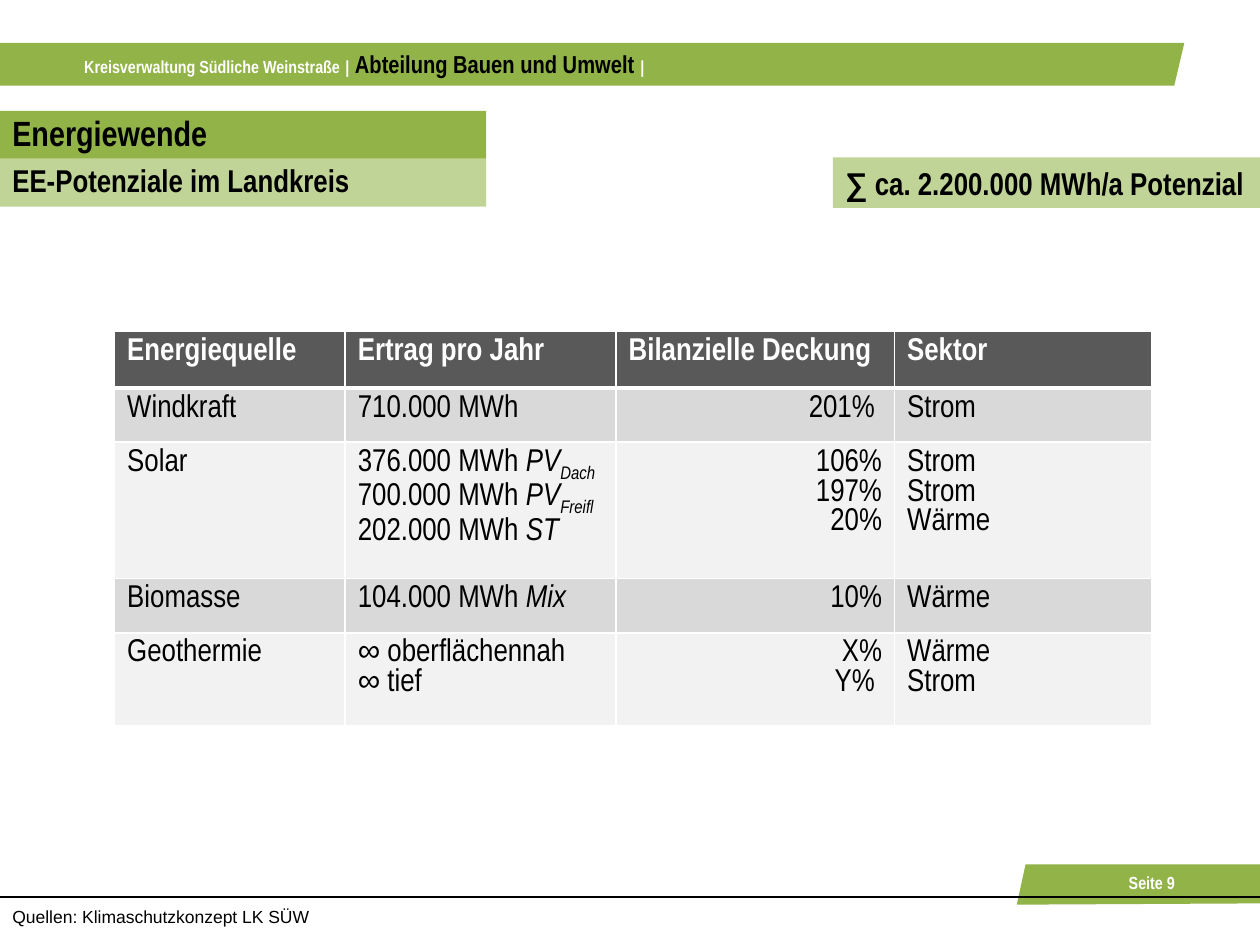
from lxml import etree
from pptx import Presentation
from pptx import util as u
from pptx.dml.color import RGBColor
from pptx.enum import shapes, text
from pptx.oxml import ns

Inches = u.Inches
COLORS = {
    "green": "91B347", "light green": "C1D498", "black": "000000", "white": "FFFFFF",
    "header": "595959", "odd row": "D9D9D9", "even row": "F2F2F2",
}
COLUMN_WIDTHS = [1.83, 2.15, 2.21, 2.04]
ROW_HEIGHTS = [0.45, 0.43, 1.06, 0.43, 0.74]
ROWS = [
    ["Energiequelle", "Ertrag pro Jahr", "Bilanzielle Deckung", "Sektor"],
    ["Windkraft", "710.000 MWh", "201% ", "Strom"],
    ["Solar", "376.000 MWh \n700.000 MWh \n202.000 MWh ", "106%\n197%\n20%",
     "Strom\nStrom\nWärme"],
    ["Biomasse", "104.000 MWh ", "10%", "Wärme"],
    ["Geothermie", "∞ oberflächennah\n∞ tief", "X%\nY% ", "Wärme\nStrom"],
]
TECHNOLOGIES = {2: [("PV", "Dach"), ("PV", "Freifl"), ("ST", "")], 3: [("Mix", "")]}


def color(name):
    return RGBColor.from_string(COLORS[name])


def format_run(run, size, color_name, bold=True, font="Arial Narrow"):
    run.font.name = font
    run.font.size = u.Pt(size)
    run.font.bold = bold
    run.font.color.rgb = color(color_name)


def fill_shape(shape, color_name):
    shape.shadow.inherit = False
    shape.fill.solid()
    shape.fill.fore_color.rgb = color(color_name)
    shape.line.fill.background()


def add_outline(slide, points, color_name):
    points = [(Inches(x), Inches(y)) for x, y in points]
    builder = slide.shapes.build_freeform(*points[0])
    builder.add_line_segments(points[1:], close=True)
    fill_shape(builder.convert_to_shape(), color_name)


def add_label(slide, box, segments, font="Arial Narrow", bold=True):
    label = slide.shapes.add_textbox(*map(Inches, box))
    label.text_frame.word_wrap = True
    paragraph = label.text_frame.paragraphs[0]
    for content, size, color_name in segments:
        run = paragraph.add_run()
        run.text = content
        format_run(run, size, color_name, bold, font)


def add_banner(slide, box, content, size, color_name, wrap=True):
    banner = slide.shapes.add_shape(shapes.MSO_SHAPE.RECTANGLE, *map(Inches, box))
    fill_shape(banner, color_name)
    frame = banner.text_frame
    frame.word_wrap = wrap
    frame.vertical_anchor = text.MSO_ANCHOR.MIDDLE
    frame.text = content
    paragraph = frame.paragraphs[0]
    paragraph.alignment = text.PP_ALIGN.LEFT
    format_run(paragraph.runs[0], size, "black")
    return banner


def add_header(slide, left, top, width, height):
    slant = 0.08
    add_outline(slide, [(left, top), (left + width, top),
                        (left + width - slant, top + height), (left, top + height)], "green")
    add_label(slide, (left + 0.57, top, 6.09, height), [
        ("Kreisverwaltung Südliche Weinstraße", 10, "white"), (" ", 14, "white"),
        ("|", 10, "white"), (" ", 14, "white"),
        ("Abteilung Bauen und Umwelt ", 14, "black"), ("|", 10, "white")])


def add_titles(slide, left, top, width, height):
    half = height / 2
    subtitle = add_banner(slide, (left, top + half, width, half),
                          "EE-Potenziale im Landkreis", 18, "green")
    fill_color = subtitle.fill._xPr.find(ns.qn("a:solidFill"))[0]
    etree.SubElement(fill_color, ns.qn("a:alpha"), val="56000")
    title = add_banner(slide, (left, top, width, half), "Energiewende", 20, "green")
    for banner in (subtitle, title):
        paragraph = banner.text_frame.paragraphs[0]
        paragraph.line_spacing = 0.9
        paragraph.space_before = u.Pt(10)


def set_borders(cell, bottom_width):
    properties = cell._tc.get_or_add_tcPr()
    widths = {"lnL": 1, "lnR": 1, "lnT": 1, "lnB": bottom_width}
    for index, (tag, width) in enumerate(widths.items()):
        border = etree.Element(ns.qn(f"a:{tag}"), w=str(u.Pt(width)))
        fill = etree.SubElement(border, ns.qn("a:solidFill"))
        etree.SubElement(fill, ns.qn("a:srgbClr"), val=COLORS["white"])
        properties.insert(index, border)


def add_technology(paragraph, name, subscript):
    for content in filter(None, (name, subscript)):
        run = paragraph.add_run()
        run.text = content
        run.font.italic = True
        if content == subscript:
            run.font._element.set("baseline", "-25000")


def fill_cell(cell, content, row, column):
    is_header = row == 0
    cell.fill.solid()
    cell.fill.fore_color.rgb = color(
        "header" if is_header else "odd row" if row % 2 else "even row")
    set_borders(cell, 3 if is_header else 1)
    cell.text_frame.text = content
    paragraphs = cell.text_frame.paragraphs
    if column == 1:
        for paragraph, technology in zip(paragraphs, TECHNOLOGIES.get(row, [])):
            add_technology(paragraph, *technology)
    for paragraph in paragraphs:
        if column == 2 and not is_header:
            paragraph.alignment = text.PP_ALIGN.RIGHT
        for run in paragraph.runs:
            format_run(run, 18, "white" if is_header else "black", is_header)


def add_energy_table(slide, left, top):
    frame = slide.shapes.add_table(
        len(ROWS), len(COLUMN_WIDTHS), Inches(left), Inches(top),
        Inches(sum(COLUMN_WIDTHS)), Inches(sum(ROW_HEIGHTS)))
    table = frame.table
    for column, width in zip(table.columns, COLUMN_WIDTHS):
        column.width = Inches(width)
    for row, height in zip(table.rows, ROW_HEIGHTS):
        row.height = Inches(height)
    for row, contents in enumerate(ROWS):
        for column, content in enumerate(contents):
            fill_cell(table.cell(row, column), content, row, column)


def add_footer(slide, left, top, width):
    right = left + width
    tab_left = right - 1.93
    add_outline(slide, [(tab_left + 0.07, top), (right, top),
                        (right, top + 0.31), (tab_left, top + 0.32)], "green")
    rule_top = Inches(top + 0.26)
    rule = slide.shapes.add_connector(
        shapes.MSO_CONNECTOR.STRAIGHT, Inches(left), rule_top, Inches(right), rule_top)
    rule.line.color.rgb = color("black")
    rule.line.width = u.Pt(1.25)
    etree.SubElement(rule._element.spPr, ns.qn("a:effectLst"))
    add_label(slide, (right - 1.14, top + 0.01, 0.85, 0.27), [("Seite 9", 10, "white")])
    add_label(slide, (left, top + 0.28, 4.49, 0.27),
              [("Quellen: Klimaschutzkonzept LK SÜW", 10, "black")], "Arial", False)


def main():
    presentation = Presentation()
    presentation.slide_width = Inches(10)
    presentation.slide_height = Inches(7.5)
    slide = presentation.slides.add_slide(presentation.slide_layouts[6])
    add_header(slide, 0, 0.34, 9.4, 0.34)
    add_titles(slide, 0, 0.88, 3.86, 0.76)
    add_energy_table(slide, 0.91, 2.63)
    add_footer(slide, 0, 6.86, 10)
    add_banner(slide, (6.61, 1.25, 3.39, 0.4), "∑ ca. 2.200.000 MWh/a Potenzial",
               18, "light green", wrap=False)
    presentation.save("out.pptx")


if __name__ == "__main__":
    main()
